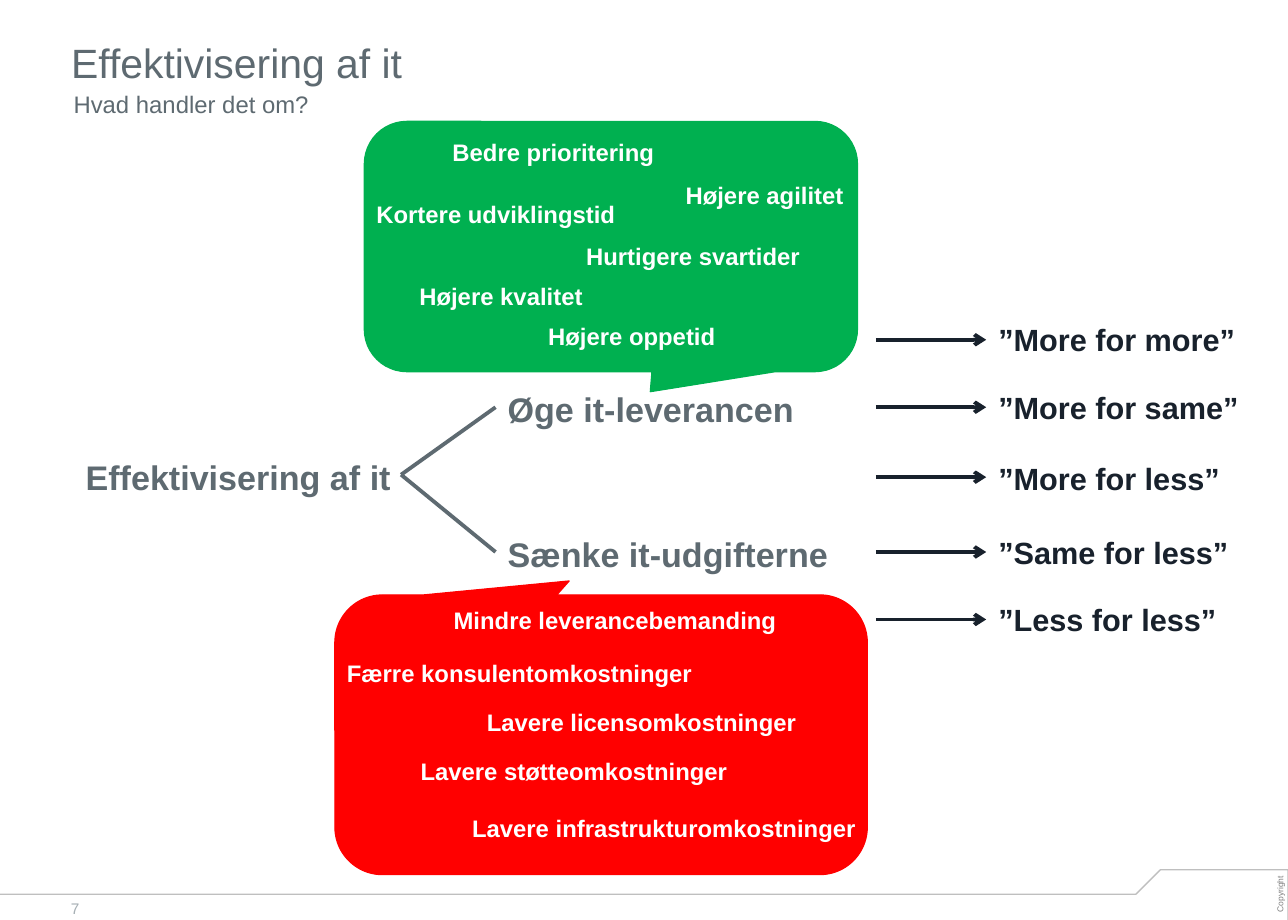
"""Build a slide on what making IT more efficient is about."""
from dataclasses import dataclass

from pptx import Presentation
from pptx.dml.color import RGBColor
from pptx.enum.shapes import MSO_CONNECTOR, MSO_SHAPE
from pptx.enum.text import MSO_ANCHOR, MSO_AUTO_SIZE, PP_ALIGN
from pptx.oxml.ns import qn
from pptx.oxml.xmlchemy import OxmlElement
from pptx.shapes.base import BaseShape
from pptx.slide import Slide
from pptx.text.text import TextFrame
from pptx.util import Pt

PX = 9144
TITLE_ONLY = 5
STRAIGHT = MSO_CONNECTOR.STRAIGHT
CALLOUT = MSO_SHAPE.ROUNDED_RECTANGULAR_CALLOUT
LEFT, CENTER = PP_ALIGN.LEFT, PP_ALIGN.CENTER
TOP, MIDDLE, BOTTOM = MSO_ANCHOR.TOP, MSO_ANCHOR.MIDDLE, MSO_ANCHOR.BOTTOM
NO_AUTOFIT = MSO_AUTO_SIZE.NONE

COLORS = {
    "white": "FFFFFF", "slate": "5E6A71", "navy": "18212C",
    "green": "00B050", "red": "FF0000", "rule": "BFBFBF",
    "copyright": "808080", "number": "A6AFB4",
}


@dataclass(frozen=True)
class Box:
    """Position and size in px."""

    left: int
    top: int
    width: int
    height: int

    def emu(self) -> tuple[int, ...]:
        """Return the four lengths in EMU."""
        return tuple(v * PX for v in (self.left, self.top, self.width, self.height))


@dataclass(frozen=True)
class Style:
    """Text appearance inside a box."""

    size: int
    color: str
    bold: bool = False
    wrap: bool = False
    align: PP_ALIGN = LEFT
    anchor: MSO_ANCHOR = TOP
    insets: tuple[int, int, int, int] = (10, 5, 10, 5)


@dataclass(frozen=True)
class Label:
    """A text with its place."""

    text: str
    box: Box


@dataclass(frozen=True)
class Bubble:
    """A speech bubble and the labels inside it."""

    box: Box
    color: str
    rotation: int
    adjustments: tuple[float, float, float]
    labels: tuple[Label, ...]


@dataclass(frozen=True)
class Outcome:
    """An outcome phrase and the arrow pointing to it."""

    text: str
    top: int
    arrow_y: int
    width: int = 188


TITLE = Style(24, "slate", wrap=True, anchor=BOTTOM, insets=(10, 0, 0, 0))
SUBTITLE = Style(14, "slate", wrap=True, insets=(0, 0, 10, 0))
BRANCH = Style(20, "slate", bold=True)
BENEFIT = Style(14, "white", bold=True)
OUTCOME = Style(18, "navy", bold=True)
NUMBER = Style(9, "number", wrap=True)
COPYRIGHT = Style(5, "copyright", align=CENTER, anchor=MIDDLE, insets=(0, 0, 0, 0))

FOOTER = ((-1, 729), (926, 729), (946, 709), (1050, 709), (1050, 751), (-1, 751))
FORK = (327, 387)
FORK_ENDS = ((404, 332), (404, 450))
BRANCHES = (
    Label("Effektivisering af it", Box(60, 367, 267, 39)),
    Label("Øge it-leverancen", Box(404, 312, 302, 39)),
    Label("Sænke it-udgifterne", Box(404, 430, 302, 39)),
)
BUBBLES = (
    Bubble(Box(297, 99, 402, 204), "green", 0, (0.08, 0.58, 0.17), (
        Label("Højere kvalitet", Box(332, 225, 174, 32)),
        Label("Kortere udviklingstid", Box(297, 158, 174, 31)),
        Label("Hurtigere svartider", Box(468, 192, 213, 31)),
        Label("Højere oppetid", Box(437, 257, 174, 31)),
        Label("Bedre prioritering", Box(359, 107, 174, 31)),
        Label("Højere agilitet", Box(549, 142, 149, 31)),
    )),
    Bubble(Box(273, 485, 434, 228), "red", 180, (0.06, 0.55, 0.17), (
        Label("Mindre leverancebemanding", Box(360, 489, 174, 31)),
        Label("Lavere licensomkostninger", Box(387, 572, 299, 32)),
        Label("Lavere infrastrukturomkostninger", Box(375, 658, 327, 32)),
        Label("Færre konsulentomkostninger", Box(273, 532, 174, 32)),
        Label("Lavere støtteomkostninger", Box(333, 612, 299, 32)),
    )),
)
OUTCOMES = (
    Outcome("”More for more”", 257, 277),
    Outcome("”More for same”", 312, 332),
    Outcome("”More for less”", 370, 389),
    Outcome("”Same for less”", 430, 450),
    Outcome("”Less for less”", 485, 505, 220),
)
ARROW_START, ARROW_END = 714, 804


def rgb(name: str) -> RGBColor:
    """Look up a named colour."""
    return RGBColor.from_string(COLORS[name])


def write(frame: TextFrame, text: str, style: Style) -> None:
    """Put styled text into a frame."""
    left, top, right, bottom = (inset * PX for inset in style.insets)
    layout = {
        "word_wrap": style.wrap, "auto_size": NO_AUTOFIT,
        "vertical_anchor": style.anchor, "margin_left": left,
        "margin_top": top, "margin_right": right, "margin_bottom": bottom,
    }
    for name, value in layout.items():
        setattr(frame, name, value)
    para = frame.paragraphs[0]
    para.alignment = style.align
    span = para.add_run()
    span.text = text
    letters = {"name": "Arial", "size": Pt(style.size), "bold": style.bold}
    for name, value in letters.items():
        setattr(span.font, name, value)
    span.font.color.rgb = rgb(style.color)


def add_label(page: Slide, label: Label, style: Style) -> BaseShape:
    """Add a text box."""
    shape = page.shapes.add_textbox(*label.box.emu())
    write(shape.text_frame, label.text, style)
    return shape


def paint(shape: BaseShape, fill: str, line: str) -> None:
    """Give a shape a flat fill and a thin outline."""
    shape.shadow.inherit = False
    shape.fill.solid()
    shape.fill.fore_color.rgb = rgb(fill)
    shape.line.color.rgb = rgb(line)
    shape.line.width = Pt(0.75)


def add_line(page: Slide, start: tuple[int, int], end: tuple[int, int],
             color: str, arrow: bool = False) -> None:
    """Add a straight line, with an arrowhead if asked."""
    line = page.shapes.add_connector(STRAIGHT, *(v * PX for v in start + end))
    line.line.color.rgb = rgb(color)
    line.line.width = Pt(2.25)
    properties = line._element.spPr
    if arrow:
        head = OxmlElement("a:tailEnd")
        head.set("type", "arrow")
        properties.find(qn("a:ln")).append(head)
    properties.append(OxmlElement("a:effectLst"))


def add_bubble(page: Slide, bubble: Bubble) -> None:
    """Add a callout and its labels."""
    shape = page.shapes.add_shape(CALLOUT, *bubble.box.emu())
    paint(shape, bubble.color, bubble.color)
    shape.rotation = bubble.rotation
    for index, value in enumerate(bubble.adjustments):
        shape.adjustments[index] = value
    for label in bubble.labels:
        patch = add_label(page, label, BENEFIT)
        patch.fill.solid()
        patch.fill.fore_color.rgb = rgb(bubble.color)


def add_frame(page: Slide) -> None:
    """Add the footer, the title and the subtitle."""
    builder = page.shapes.build_freeform(*FOOTER[0], scale=PX)
    builder.add_line_segments(FOOTER[1:], close=True)
    paint(builder.convert_to_shape(), "white", "rule")
    add_label(page, Label("Copyright", Box(1023, 723, 41, 12)), COPYRIGHT).rotation = 270
    add_label(page, Label("7", Box(48, 728, 39, 25)), NUMBER)
    title = page.shapes.title
    title.left, title.top, title.width, title.height = Box(48, 21, 977, 50).emu()
    write(title.text_frame, "Effektivisering af it", TITLE)
    subtitle = add_label(page, Label("Hvad handler det om?", Box(48, 73, 977, 42)), SUBTITLE)
    subtitle.text_frame.paragraphs[0]._p.get_or_add_pPr().set("marL", str(12 * PX))


def main() -> None:
    """Build and save the deck."""
    deck = Presentation()
    deck.slide_width, deck.slide_height = 1050 * PX, 750 * PX
    page = deck.slides.add_slide(deck.slide_layouts[TITLE_ONLY])
    add_frame(page)
    for label in BRANCHES:
        add_label(page, label, BRANCH)
    for end in FORK_ENDS:
        add_line(page, FORK, end, "slate")
    for bubble in BUBBLES:
        add_bubble(page, bubble)
    for outcome in OUTCOMES:
        box = Box(ARROW_END, outcome.top, outcome.width, 39)
        add_label(page, Label(outcome.text, box), OUTCOME)
        y = outcome.arrow_y
        add_line(page, (ARROW_START, y), (ARROW_END, y), "navy", arrow=True)
    deck.save("out.pptx")


if __name__ == "__main__":
    main()
